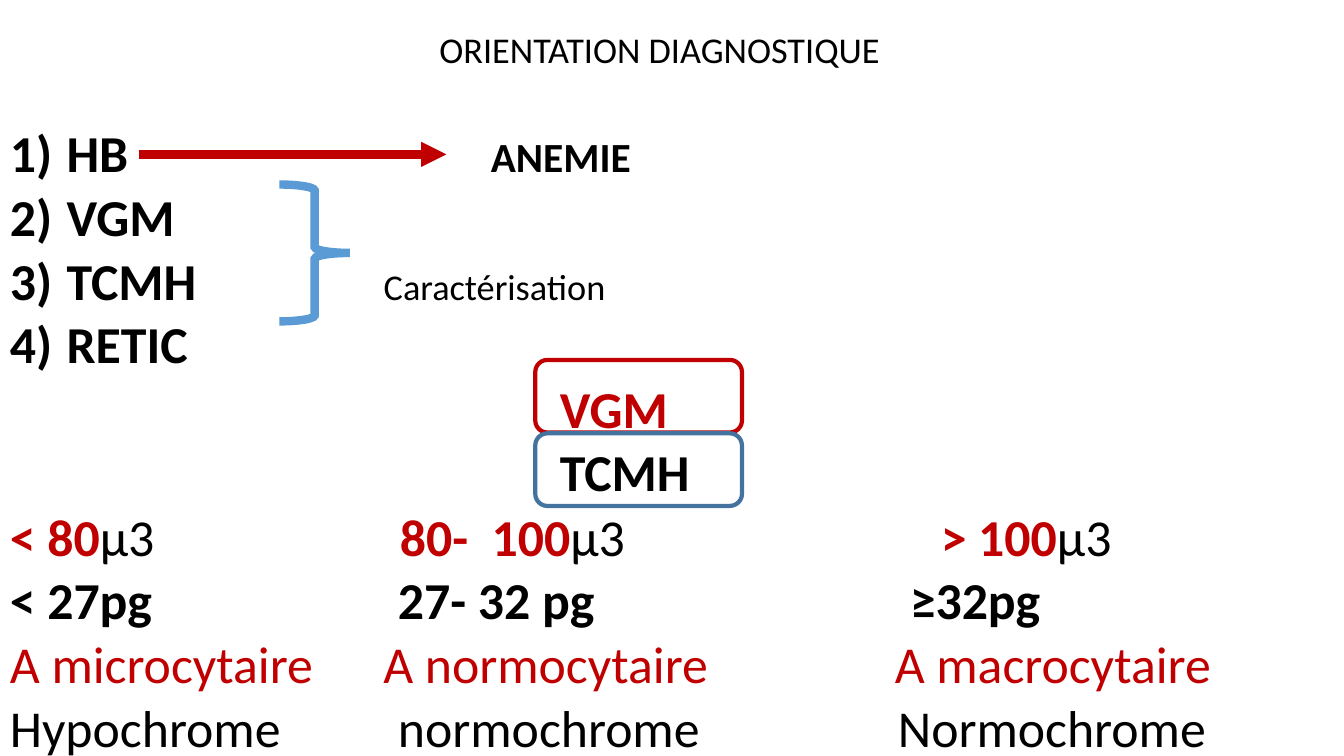
import pptx
import pptx.dml.color
import pptx.enum.shapes
import pptx.enum.text
import pptx.oxml.ns
import pptx.util
from lxml import etree

Cm = pptx.util.Cm
Pt = pptx.util.Pt
RGB = pptx.dml.color.RGBColor
KIND = pptx.enum.shapes.MSO_SHAPE
ALIGN = pptx.enum.text.PP_ALIGN
qn = pptx.oxml.ns.qn

RED = RGB(0xC0, 0x00, 0x00)
BLACK = RGB(0x00, 0x00, 0x00)
BLUE = RGB(0x5B, 0x9B, 0xD5)
STEEL = RGB(0x43, 0x73, 0x9E)

LEFT = 0.25
TOP = 3.35
PITCH = 1.61

# Each row: runs of (text, bold, colour), then its two tab stops in cm
ROWS = [
    ([("< 80", True, RED), ("μ3", False, BLACK),
      ("\t80-  100", True, RED), ("μ3", False, BLACK),
      ("\t> 100", True, RED), ("μ3", False, BLACK)], (9.83, 23.46)),
    ([("< 27pg\t27- 32 pg\t≥32pg", True, BLACK)], (9.78, 22.68)),
    ([("A microcytaire\tA normocytaire\tA macrocytaire", False, RED)],
     (9.41, 22.3)),
    ([("Hypochrome\tnormochrome\tNormochrome", False, BLACK)], (9.78, 22.38)),
]


def add_box(slide, left, top, width, height):
    frame = slide.shapes.add_textbox(
        Cm(left), Cm(top), Cm(width), Cm(height)).text_frame
    frame.word_wrap = True
    frame.margin_left = frame.margin_right = 0
    frame.margin_top = frame.margin_bottom = 0
    return frame


def add_para(frame, runs, size=37, align=ALIGN.LEFT, tabs=(), number=False):
    """Fill the first empty paragraph, or add one, with (text, bold, colour) runs."""
    para = frame.paragraphs[-1]
    if para.runs:
        para = frame.add_paragraph()
    para.alignment = align
    para.line_spacing = 0.8
    para.space_before = Pt(10)
    props = para._p.get_or_add_pPr()
    if number:
        props.set("marL", str(Cm(1.43)))
        props.set("indent", str(-Cm(1.43)))
        font = etree.SubElement(props, qn("a:buFont"))
        font.set("typeface", "+mj-lt")
        etree.SubElement(props, qn("a:buAutoNum")).set("type", "arabicParenR")
    if tabs:
        stops = etree.SubElement(props, qn("a:tabLst"))
        for tab in tabs:
            stop = etree.SubElement(stops, qn("a:tab"))
            stop.set("pos", str(Cm(tab)))
            stop.set("algn", "l")
    for text, bold, color in runs:
        run = para.add_run()
        run.text = text
        run.font.name = "Calibri"
        run.font.size = Pt(size)
        run.font.bold = bold
        run.font.color.rgb = color


def add_shape(slide, kind, left, top, width, height, color, weight):
    shape = slide.shapes.add_shape(
        kind, Cm(left), Cm(top), Cm(width), Cm(height))
    shape.shadow.inherit = False
    shape.fill.background()
    shape.line.color.rgb = color
    shape.line.width = Pt(weight)
    join = etree.SubElement(shape.line._get_or_add_ln(), qn("a:miter"))
    join.set("lim", "800000")


def add_arrow(slide, start, end, level, color, weight):
    arrow = slide.shapes.add_connector(
        pptx.enum.shapes.MSO_CONNECTOR.STRAIGHT,
        Cm(start), Cm(level), Cm(end), Cm(level))
    arrow.line.color.rgb = color
    arrow.line.width = Pt(weight)
    tail = etree.SubElement(arrow.line._get_or_add_ln(), qn("a:tailEnd"))
    tail.set("type", "triangle")
    etree.SubElement(arrow._element.spPr, qn("a:effectLst"))


def main():
    deck = pptx.Presentation()
    deck.slide_width, deck.slide_height = Cm(33.87), Cm(19.05)
    slide = deck.slides.add_slide(deck.slide_layouts[6])

    title = add_box(slide, 0, 0.9, 33.25, 1.3)
    add_para(title, [("ORIENTATION DIAGNOSTIQUE", False, BLACK)],
             size=25.9, align=ALIGN.CENTER)

    tests = add_box(slide, LEFT, TOP, 6.7, 4 * PITCH)
    for name in ("HB", "VGM", "TCMH", "RETIC"):
        add_para(tests, [(name, True, BLACK)], number=True)

    result = add_box(slide, 12.37, 3.54, 6, 1.4)
    add_para(result, [("ANEMIE", True, BLACK)], size=29.6)
    note = add_box(slide, 9.67, 6.88, 8, 1.3)
    add_para(note, [("Caractérisation", False, BLACK)], size=25.9)

    heads = add_box(slide, 14.11, TOP + 4 * PITCH, 4.6, 2 * PITCH)
    for name, color in (("VGM", RED), ("TCMH", BLACK)):
        add_para(heads, [(name, True, color)])

    values = add_box(slide, LEFT, TOP + 6 * PITCH, 33.3, 6)
    for runs, tabs in ROWS:
        add_para(values, runs, tabs=tabs)

    add_arrow(slide, 3.51, 11.25, 3.89, RED, 6)
    add_shape(slide, KIND.RIGHT_BRACE, 7.04, 4.65, 1.78, 3.45, BLUE, 6)
    for row, color in enumerate((RED, STEEL)):
        add_shape(slide, KIND.ROUNDED_RECTANGLE,
                  13.49, 9.07 + row * 1.85, 5.21, 1.83, color, 3)

    deck.save("out.pptx")


if __name__ == "__main__":
    main()
